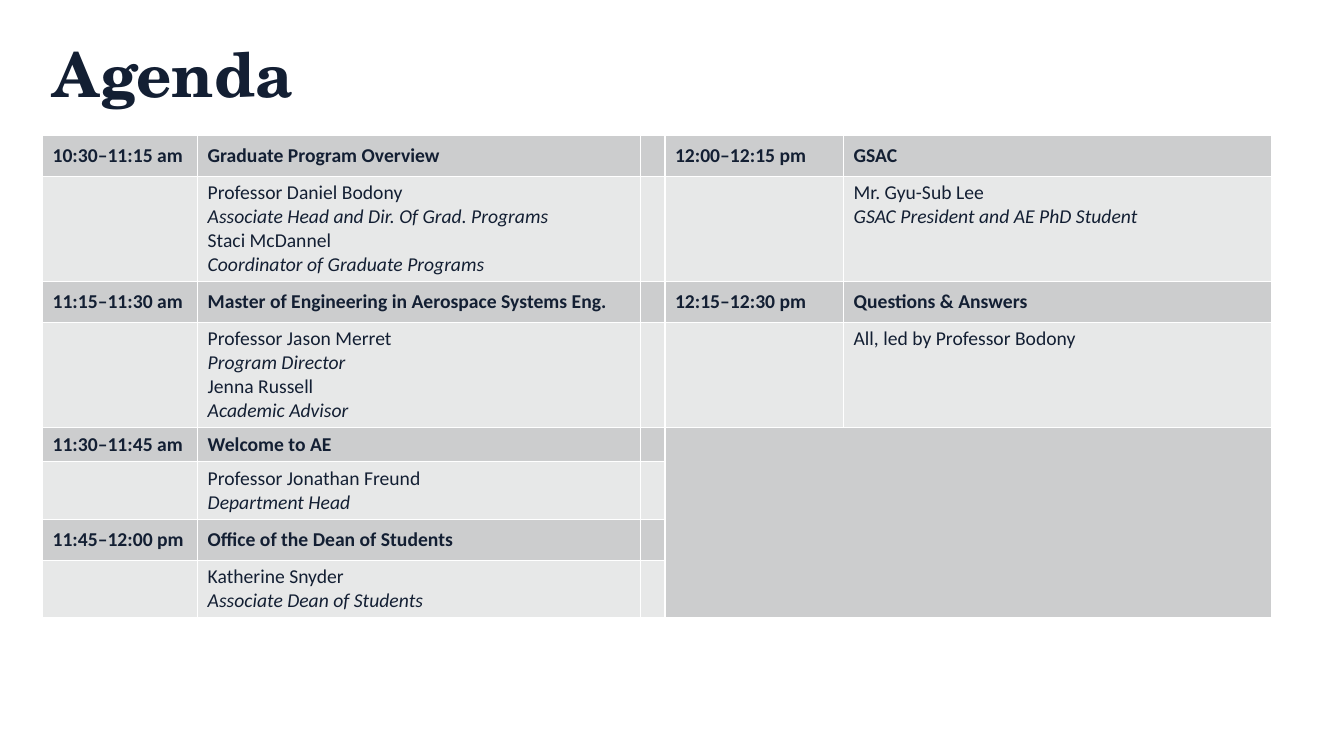
from itertools import count
from lxml.etree import SubElement
from pptx import Presentation
from pptx.dml.color import RGBColor
from pptx.enum.text import MSO_ANCHOR
from pptx.oxml.ns import qn
from pptx.util import Pt

NAVY = RGBColor(0x13, 0x1F, 0x33)
DARK = RGBColor(0xCC, 0xCD, 0xCE)
LIGHT = RGBColor(0xE7, 0xE8, 0xE8)
WHITE = RGBColor(0xFF, 0xFF, 0xFF)

WIDTHS = [110.8, 316.6, 16.9, 127.6, 305.8]
HEIGHTS = [29, 75.4, 29, 75.4, 24.2, 41.4, 29, 41.4]
LEFT = [
    ("10:30–11:15 am", "Graduate Program Overview",
     ["Professor Daniel Bodony\nAssociate Head and Dir. Of Grad. Programs",
      "Staci McDannel\nCoordinator of Graduate Programs"]),
    ("11:15–11:30 am", "Master of Engineering in Aerospace Systems Eng.",
     ["Professor Jason Merret\nProgram Director",
      "Jenna Russell\nAcademic Advisor"]),
    ("11:30–11:45 am", "Welcome to AE",
     ["Professor Jonathan Freund", "Department Head"]),
    ("11:45–12:00 pm", "Office of the Dean of Students",
     ["Katherine Snyder\nAssociate Dean of Students"]),
]
RIGHT = [
    ("12:00–12:15 pm", "GSAC",
     ["Mr. Gyu-Sub Lee", "GSAC President and AE PhD Student"]),
    ("12:15–12:30 pm", "Questions & Answers",
     ["All, led by Professor Bodony"]),
]


def add_run(para, text, face, size, bold=False, slant=False):
    run = para.add_run()
    run.text = text
    font = run.font
    font.name, font.size = face, Pt(size)
    font.bold, font.italic = bold, slant
    font.color.rgb = NAVY


def edge(cell):
    props = cell._tc.get_or_add_tcPr()
    for spot, side in enumerate(("a:lnL", "a:lnR", "a:lnT", "a:lnB")):
        line = props.makeelement(qn(side), {"w": str(Pt(1))})
        paint = SubElement(line, qn("a:solidFill"))
        SubElement(paint, qn("a:srgbClr"), val=str(WHITE))
        props.insert(spot, line)


deck = Presentation()
deck.slide_width, deck.slide_height = Pt(960), Pt(540)
slide = deck.slides.add_slide(deck.slide_layouts[6])

title = slide.shapes.add_textbox(Pt(30.2), Pt(0), Pt(902.2), Pt(104.4))
frame = title.text_frame
frame.word_wrap = True
frame.vertical_anchor = MSO_ANCHOR.MIDDLE
add_run(frame.paragraphs[0], "Agenda", "TeX Gyre Schola", 44, bold=True)

table = slide.shapes.add_table(
    len(HEIGHTS), len(WIDTHS), Pt(30.4), Pt(96.8),
    Pt(sum(WIDTHS)), Pt(sum(HEIGHTS))).table
for col, width in zip(table.columns, WIDTHS):
    col.width = Pt(width)
for row, height in zip(table.rows, HEIGHTS):
    row.height = Pt(height)

for first, items in ((0, LEFT), (3, RIGHT)):
    for spot, (time, topic, people) in enumerate(items):
        for col, text in ((first, time), (first + 1, topic)):
            cell = table.cell(2 * spot, col)
            cell.vertical_anchor = MSO_ANCHOR.MIDDLE
            add_run(cell.text_frame.paragraphs[0], text, "Calibri", 14, bold=True)
        frame = table.cell(2 * spot + 1, first + 1).text_frame
        turn = count()
        for step, block in enumerate(people):
            para = frame.add_paragraph() if step else frame.paragraphs[0]
            for part, text in enumerate(block.split("\n")):
                if part:
                    para.add_line_break()
                    para._p[-1].get_or_add_rPr().set("sz", "1400")
                add_run(para, text, "Calibri", 14, slant=next(turn) % 2 == 1)

table.cell(4, 3).merge(table.cell(7, 4))
for spot, row in enumerate(table.rows):
    for col, cell in enumerate(row.cells):
        cell.fill.solid()
        dark = spot % 2 == 0 or (spot > 4 and col > 2)
        cell.fill.fore_color.rgb = DARK if dark else LIGHT
        edge(cell)
        if not cell.text_frame.text:
            SubElement(cell.text_frame.paragraphs[0]._p, qn("a:endParaRPr"), sz="1400")

deck.save("out.pptx")
